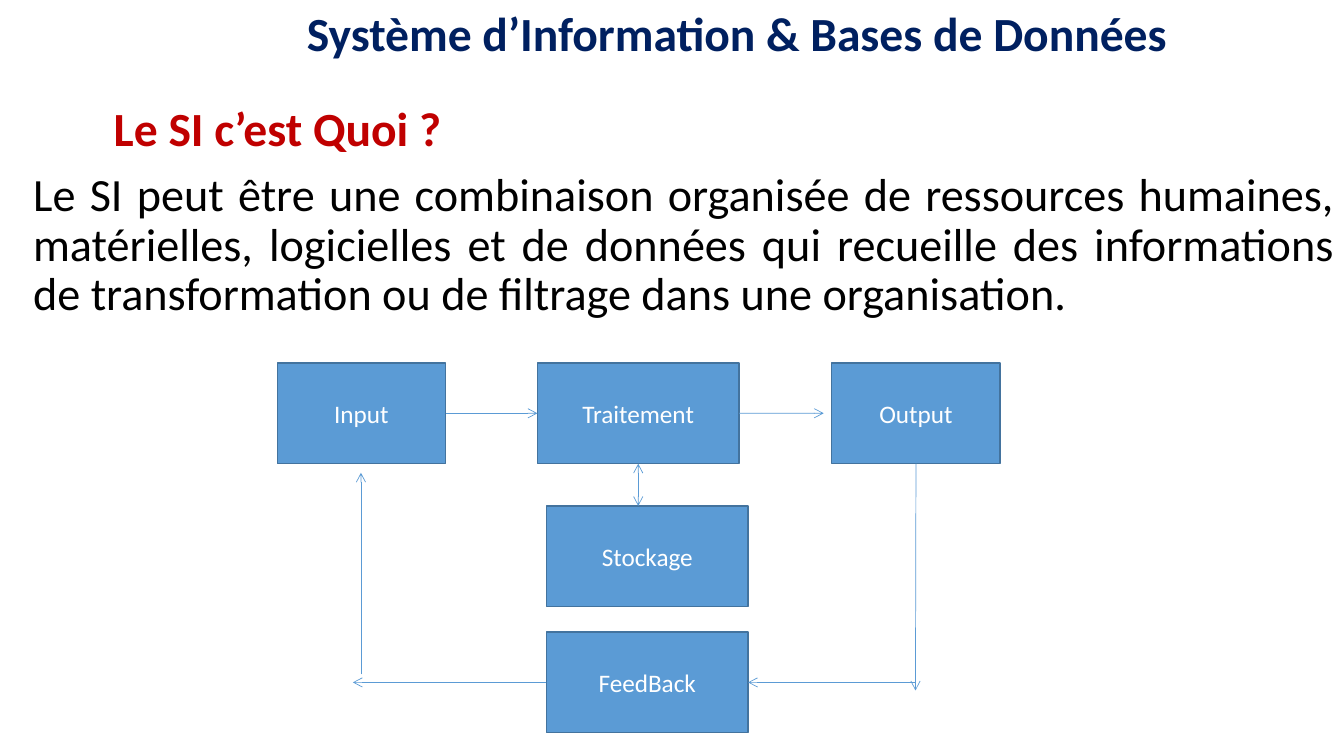
"""Build a slide that explains what an information system is."""
from lxml import etree
from pptx import Presentation
from pptx.dml.color import RGBColor
from pptx.enum.shapes import MSO_CONNECTOR, MSO_SHAPE
from pptx.enum.text import MSO_ANCHOR, MSO_AUTO_SIZE, PP_ALIGN
from pptx.oxml.ns import qn
from pptx.util import Inches, Pt

RECTANGLE = MSO_SHAPE.RECTANGLE
STRAIGHT = MSO_CONNECTOR.STRAIGHT
TOP, MIDDLE, BOTTOM = MSO_ANCHOR.TOP, MSO_ANCHOR.MIDDLE, MSO_ANCHOR.BOTTOM
LEFT, CENTER, JUSTIFY = PP_ALIGN.LEFT, PP_ALIGN.CENTER, PP_ALIGN.JUSTIFY
NO_AUTOFIT = MSO_AUTO_SIZE.NONE
LEFT_SIDE, BOTTOM_SIDE, RIGHT_SIDE = 1, 2, 3
TITLE_ONLY = 5

FONT = "Calibri"
COLOURS = {
    "title": "002060",
    "question": "C00000",
    "body": "000000",
    "box": "5B9BD5",
    "border": "43739E",
    "label": "FFFFFF",
}
BOX_HEIGHT = 1
BOXES = {
    "Input": (2.75, 3.6, 1.67),
    "Traitement": (5.33, 3.6, 2),
    "Output": (8.25, 3.6, 1.67),
    "Stockage": (5.42, 5.02, 2),
    "FeedBack": (5.42, 6.27, 2),
}
DEFINITION = (
    "Le SI peut être une combinaison organisée de ressources humaines, "
    "matérielles, logicielles et de données qui recueille des informations "
    "de transformation ou de filtrage dans une organisation."
)


def colour(name):
    """Return the named colour."""
    return RGBColor.from_string(COLOURS[name])


def write(shape, text, size, tint, align, anchor, bold=False, spacing=1.0):
    """Write one formatted paragraph in a shape."""
    frame = shape.text_frame
    frame.word_wrap = True
    frame.auto_size = NO_AUTOFIT
    frame.vertical_anchor = anchor
    para = frame.paragraphs[0]
    para.alignment = align
    para.line_spacing = spacing
    span = para.add_run()
    span.text = text
    span.font.name = FONT
    span.font.size = Pt(size)
    span.font.bold = bold
    span.font.color.rgb = colour(tint)


def add_title(page, text):
    """Move and fill the title placeholder."""
    title = page.shapes.title
    title.left, title.top = Inches(1.56), Inches(-0.14)
    title.width, title.height = Inches(11.5), Inches(0.8)
    write(title, text, 34, "title", CENTER, BOTTOM, bold=True, spacing=0.9)


def add_text(page, place, text, size, tint, align, anchor, bold=False):
    """Add a text box at left, top, width, height."""
    box = page.shapes.add_textbox(*map(Inches, place))
    write(box, text, size, tint, align, anchor, bold, spacing=0.9)


def add_box(page, text, left, top, width):
    """Add a labelled box of the diagram."""
    box = page.shapes.add_shape(
        RECTANGLE, Inches(left), Inches(top), Inches(width), Inches(BOX_HEIGHT)
    )
    box.shadow.inherit = False
    box.fill.solid()
    box.fill.fore_color.rgb = colour("box")
    box.line.color.rgb = colour("border")
    box.line.width = Pt(1)
    write(box, text, 18, "label", CENTER, MIDDLE)
    return box


def add_arrow(page, start, end, source=None, target=None, double=False):
    """Add an arrow, joined to (box, side) pairs where given."""
    arrow = page.shapes.add_connector(STRAIGHT, *map(Inches, start + end))
    if source:
        arrow.begin_connect(*source)
    if target:
        arrow.end_connect(*target)
    arrow.line.color.rgb = colour("box")
    arrow.line.width = Pt(0.5)
    line = arrow.line._get_or_add_ln()
    for tag in ("a:headEnd", "a:tailEnd") if double else ("a:tailEnd",):
        etree.SubElement(line, qn(tag), type="arrow")
    etree.SubElement(arrow._element.spPr, qn("a:effectLst"))


def add_diagram(page):
    """Add the boxes and the arrows between them."""
    boxes = {name: add_box(page, name, *place) for name, place in BOXES.items()}
    treatment, output = boxes["Traitement"], boxes["Output"]
    feedback = boxes["FeedBack"]
    add_arrow(page, (4.42, 4.1), (5.33, 4.1),
              (boxes["Input"], RIGHT_SIDE), (treatment, LEFT_SIDE))
    add_arrow(page, (7.33, 4.1), (8.17, 4.1), (treatment, RIGHT_SIDE))
    add_arrow(page, (6.33, 4.6), (6.33, 5.02), (treatment, BOTTOM_SIDE), double=True)
    add_arrow(page, (9.08, 4.6), (9.08, 6.85), (output, BOTTOM_SIDE))
    add_arrow(page, (9.08, 6.77), (7.42, 6.77), target=(feedback, RIGHT_SIDE))
    add_arrow(page, (5.42, 6.77), (3.5, 6.77), (feedback, LEFT_SIDE))
    add_arrow(page, (3.58, 6.69), (3.58, 4.69))


def main():
    """Build and save the deck."""
    deck = Presentation()
    deck.slide_width, deck.slide_height = Inches(13.33), Inches(7.5)
    page = deck.slides.add_slide(deck.slide_layouts[TITLE_ONLY])
    add_title(page, "Système d’Information & Bases de Données")
    add_text(page, (1.03, 0.81, 11.5, 0.8), "Le SI c’est Quoi ?",
             34, "question", LEFT, BOTTOM, bold=True)
    add_text(page, (0.23, 1.65, 13.11, 1.45), DEFINITION,
             33, "body", JUSTIFY, TOP)
    add_diagram(page)
    deck.save("out.pptx")


if __name__ == "__main__":
    main()
